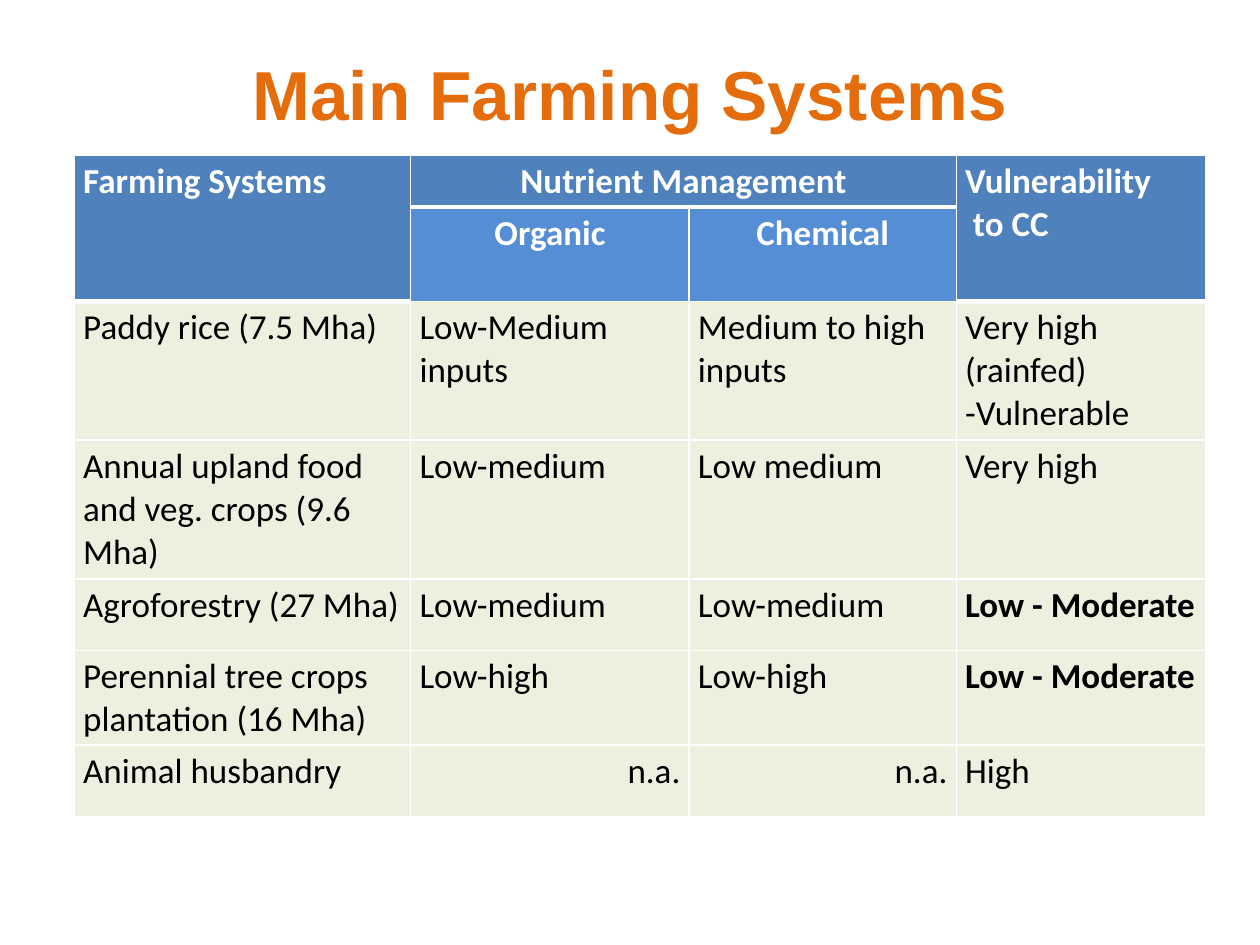
import pptx
import pptx.util
import pptx.dml.color
import pptx.enum.text
import pptx.oxml
import pptx.oxml.ns

THEME = {
    "title_font": "Arial", "title_size": 39.6, "title": "E46C0A",
    "table_font": "Calibri", "table_size": 20,
    "header": "4F81BD", "subheader": "558ED5", "body": "EBF1DE",
    "light": "FFFFFF", "dark": "000000",
    "thin": 1, "thick": 3,
}
TITLE = "Main Farming Systems"
HEADER = [
    ["Farming Systems", "Nutrient Management", "", "Vulnerability\n to CC"],
    ["", "Organic", "Chemical", ""],
]
SYSTEMS = [
    ["Paddy rice (7.5 Mha)", "Low-Medium inputs", "Medium to high inputs",
     "Very high (rainfed) -Vulnerable"],
    ["Annual upland food and veg. crops (9.6 Mha)", "Low-medium", "Low medium", "Very high"],
    ["Agroforestry (27 Mha)", "Low-medium", "Low-medium", "Low - Moderate"],
    ["Perennial tree crops plantation (16 Mha)", "Low-high", "Low-high", "Low - Moderate"],
    ["Animal husbandry", "n.a.", "n.a.", "High"],
]
BOLD_RATING = "Low - Moderate"
MISSING = "n.a."
MERGES = [((0, 0), (1, 0)), ((0, 1), (0, 2)), ((0, 3), (1, 3))]
COLUMNS = [2.67, 2.21, 2.12, 1.98]
ROWS = [0.41, 0.75, 1.1, 1.1, 0.57, 0.75, 0.57]
TITLE_BOX = (0.69, 0.36, 8.62, 0.76)
TABLE_ORIGIN = (0.59, 1.23)

Inches = pptx.util.Inches
ALIGN = pptx.enum.text.PP_ALIGN


def color(name):
    return pptx.dml.color.RGBColor.from_string(THEME[name])


def style(para, family, size, ink, bold, align):
    para.alignment = align
    para.font.name = THEME[family]
    para.font.size = pptx.util.Pt(THEME[size])
    para.font.color.rgb = color(ink)
    para.font.bold = bold


def add_borders(cell, bottom):
    properties = cell._tc.get_or_add_tcPr()
    for position, side in enumerate("LRTB"):
        weight = THEME[bottom if side == "B" else "thin"]
        line = pptx.oxml.parse_xml(
            f'<a:ln{side} {pptx.oxml.ns.nsdecls("a")} w="{pptx.util.Pt(weight)}">'
            f'<a:solidFill><a:srgbClr val="{THEME["light"]}"/></a:solidFill></a:ln{side}>')
        properties.insert(position, line)


def fill_cell(cell, text, row, column):
    is_header = row < len(HEADER)
    inner = column in (1, 2)
    cell.margin_left = cell.margin_right = Inches(0.07)
    cell.margin_top = cell.margin_bottom = Inches(0.04)
    cell.fill.solid()
    cell.fill.fore_color.rgb = color(
        "body" if not is_header else "subheader" if row == 1 and inner else "header")
    add_borders(cell, "thick" if is_header and not (row == 1 and inner) else "thin")
    align = ALIGN.CENTER if is_header and inner else ALIGN.RIGHT if text == MISSING else ALIGN.LEFT
    cell.text = text
    for para in cell.text_frame.paragraphs:
        style(para, "table_font", "table_size", "light" if is_header else "dark",
              is_header or text == BOLD_RATING, align)


def add_title(page):
    box = page.shapes.add_textbox(*map(Inches, TITLE_BOX))
    frame = box.text_frame
    frame.word_wrap = True
    frame.vertical_anchor = pptx.enum.text.MSO_ANCHOR.MIDDLE
    frame.text = TITLE
    style(frame.paragraphs[0], "title_font", "title_size", "title", True, ALIGN.CENTER)


def add_systems_table(page):
    left, top = TABLE_ORIGIN
    table = page.shapes.add_table(
        len(ROWS), len(COLUMNS), Inches(left), Inches(top),
        Inches(sum(COLUMNS)), Inches(sum(ROWS))).table
    for column, width in zip(table.columns, COLUMNS):
        column.width = Inches(width)
    for row, height in zip(table.rows, ROWS):
        row.height = Inches(height)
    for row, texts in enumerate(HEADER + SYSTEMS):
        for column, text in enumerate(texts):
            fill_cell(table.cell(row, column), text, row, column)
    for first, last in MERGES:
        table.cell(*first).merge(table.cell(*last))


def main():
    deck = pptx.Presentation()
    deck.slide_width, deck.slide_height = Inches(10), Inches(7.5)
    page = deck.slides.add_slide(deck.slide_layouts[6])
    add_title(page)
    add_systems_table(page)
    deck.save("out.pptx")


if __name__ == "__main__":
    main()
